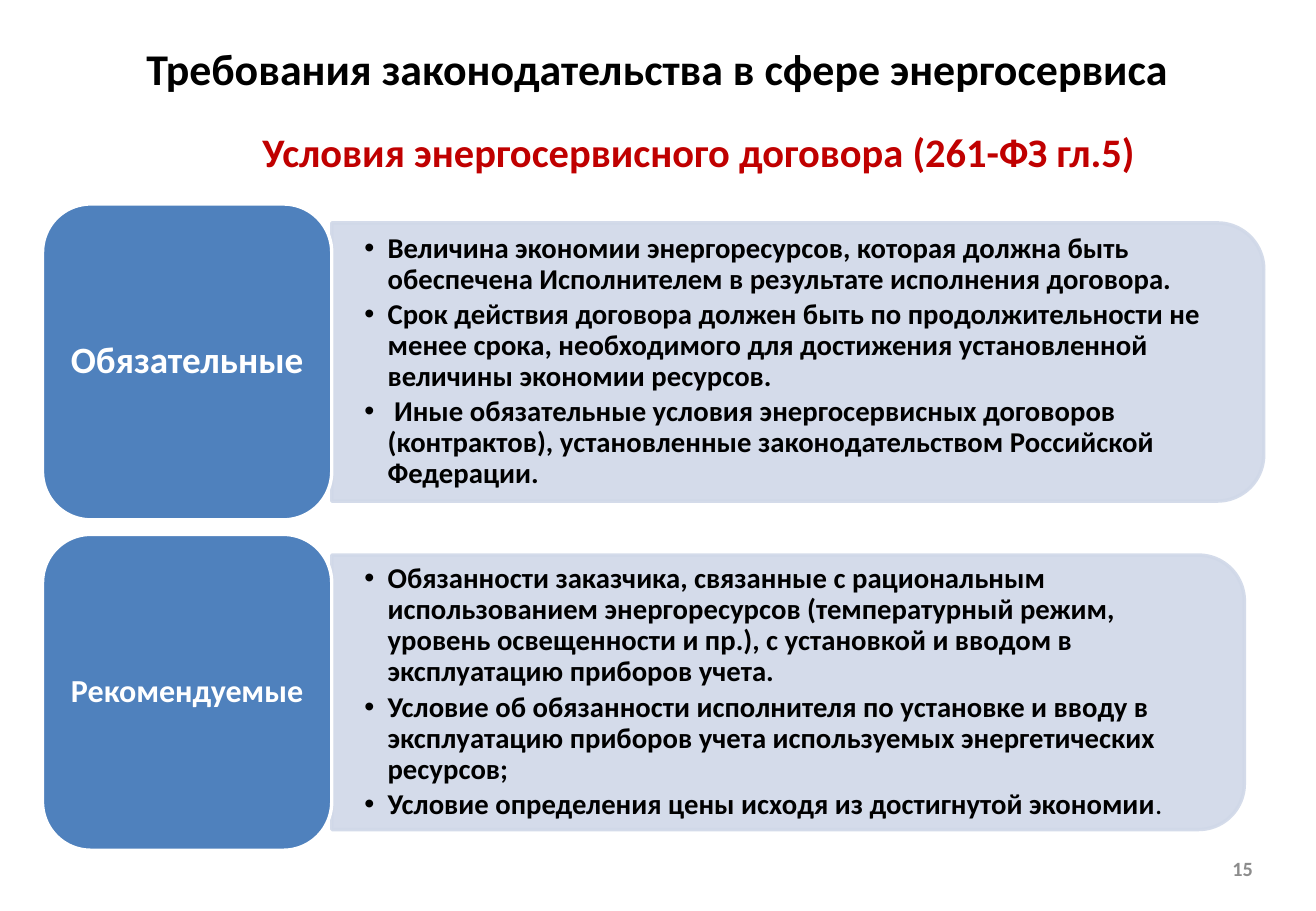
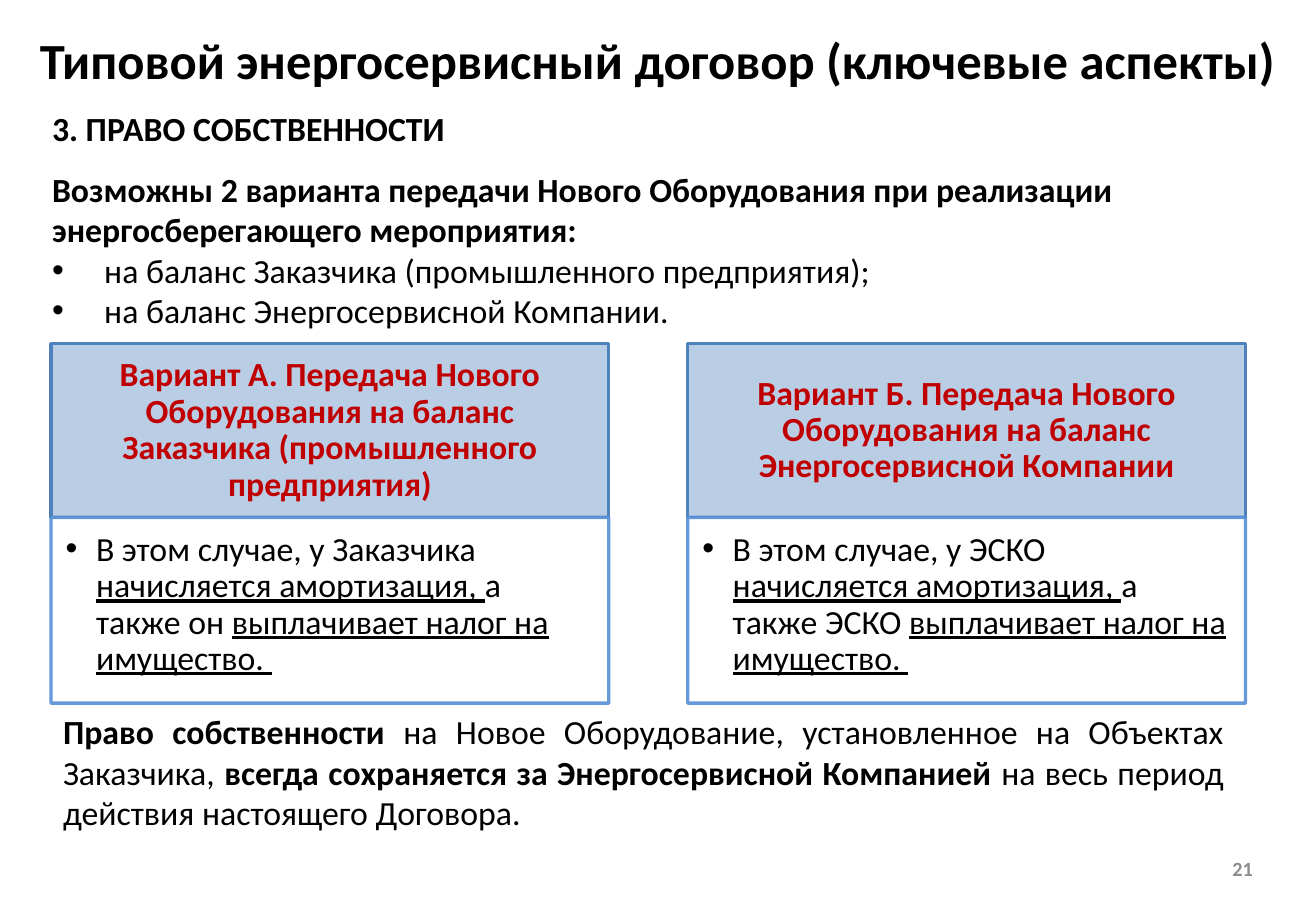
from lxml.etree import SubElement
from pptx import Presentation
from pptx.dml.color import RGBColor
from pptx.enum.shapes import MSO_SHAPE as Shape
from pptx.enum.text import MSO_ANCHOR as Anchor, MSO_AUTO_SIZE as AutoSize, PP_ALIGN as Align
from pptx.oxml.ns import qn
from pptx.util import Inches, Pt

FONT = "Calibri"
BLACK, WHITE, RED, GRAY = "000000", "FFFFFF", "C00000", "8C8C8C"
BLUE, PALE_BLUE, CARD_BLUE, CARD_LINE = "4F81BD", "D0D8E8", "B9CDE5", "558ED5"
SLIDE_WIDTH, SLIDE_HEIGHT = 10.83, 7.5
MARGINS = (0.1, 0.05, 0.1, 0.05)

BLOCK_LEFT, BLOCK_TOP, BLOCK_WIDTH, BLOCK_HEIGHT, BLOCK_STEP = 0.35, 1.68, 2.38, 2.6, 2.72
PANEL_INSET = 0.11
CARD_LEFT, CARD_TOP, CARD_WIDTH, CARD_STEP = 0.42, 2.83, 4.59, 5.24
HEAD_HEIGHT, BODY_HEIGHT = 1.43, 1.53

CONDITIONS = [
    ("Обязательные", 22, 7.67, 2.29, [
        "Величина экономии энергоресурсов, которая должна быть обеспечена Исполнителем "
        "в результате исполнения договора.",
        "Срок действия договора должен быть по продолжительности не менее срока, "
        "необходимого для достижения установленной величины экономии ресурсов.",
        " Иные обязательные условия энергосервисных договоров (контрактов), "
        "установленные законодательством Российской Федерации.",
    ]),
    ("Рекомендуемые", 19, 7.51, 2.26, [
        "Обязанности заказчика, связанные с рациональным использованием энергоресурсов "
        "(температурный режим, уровень освещенности и пр.), с установкой и вводом "
        "в эксплуатацию приборов учета.",
        "Условие об обязанности исполнителя по установке и вводу в эксплуатацию "
        "приборов учета используемых энергетических ресурсов;",
        [("Условие определения цены исходя из достигнутой экономии", "b"), (".", "")],
    ]),
]
VARIANTS = [
    ("Вариант А. Передача Нового Оборудования на баланс Заказчика "
     "(промышленного предприятия)", "Заказчика", "он"),
    ("Вариант Б. Передача Нового Оборудования на баланс Энергосервисной Компании",
     "ЭСКО", "ЭСКО"),
]


def color(value):
    return RGBColor.from_string(value)


def add_bullet(para, hang):
    properties = para._p.get_or_add_pPr()
    properties.set("marL", str(Inches(hang)))
    properties.set("indent", str(-Inches(hang)))
    SubElement(properties, qn("a:buFont"), typeface="Arial")
    SubElement(properties, qn("a:buChar"), char="•")


def write(frame, paragraphs, size=20, ink=BLACK, bold=False, align=Align.LEFT,
          anchor=Anchor.MIDDLE, margins=MARGINS, spacing=1.0, after=0, hang=0, first_bullet=0):
    frame.word_wrap = True
    frame.auto_size = AutoSize.NONE
    frame.vertical_anchor = anchor
    (frame.margin_left, frame.margin_top,
     frame.margin_right, frame.margin_bottom) = map(Inches, margins)
    for index, content in enumerate(paragraphs):
        para = frame.add_paragraph() if index else frame.paragraphs[0]
        para.alignment = align
        para.line_spacing = spacing
        para.space_before = Pt(0)
        para.space_after = Pt(after)
        if hang and index >= first_bullet:
            add_bullet(para, hang)
        spans = [(content, "b" if bold else "")] if isinstance(content, str) else content
        for text, marks in spans:
            span = para.add_run()
            span.text = text
            span.font.name = FONT
            span.font.size = Pt(size)
            span.font.color.rgb = color(ink)
            span.font.bold = "b" in marks
            span.font.underline = "u" in marks


def add_text(page, left, top, width, height, paragraphs, **text_format):
    box = page.shapes.add_textbox(*map(Inches, (left, top, width, height)))
    write(box.text_frame, paragraphs, **text_format)


def add_box(page, kind, left, top, width, height, fill, line, opacity=None):
    box = page.shapes.add_shape(kind, *map(Inches, (left, top, width, height)))
    box.shadow.inherit = False
    box.fill.solid()
    box.fill.fore_color.rgb = color(fill)
    box.line.color.rgb = color(line)
    box.line.width = Pt(2)
    if opacity:
        for paint in box._element.spPr.iter(qn("a:srgbClr")):
            SubElement(paint, qn("a:alpha"), val=str(opacity * 1000))
    return box


def add_page(deck, title, top, size, number):
    page = deck.slides.add_slide(deck.slide_layouts[5])
    heading = page.shapes.title
    heading.left, heading.top = Inches(0), Inches(top)
    heading.width, heading.height = Inches(SLIDE_WIDTH), Inches(0.58)
    write(heading.text_frame, [title], size=size, bold=True, align=Align.CENTER, spacing=1.1)
    add_text(page, 7.88, 6.95, 2.53, 0.4, [number], size=12, ink=GRAY, bold=True,
             align=Align.RIGHT)
    return page


def add_condition(page, top, label, label_size, width, height, items):
    left = BLOCK_LEFT + BLOCK_WIDTH
    middle = top + BLOCK_HEIGHT / 2
    panel = add_box(page, Shape.ROUND_2_SAME_RECTANGLE, left + (width - height) / 2,
                    middle - width / 2, height, width, PALE_BLUE, PALE_BLUE, opacity=90)
    panel.rotation = 90
    add_text(page, left, middle - height / 2 + PANEL_INSET, width - PANEL_INSET,
             height - 2 * PANEL_INSET, items, size=17, bold=True,
             margins=(0.27, 0.14, 0.27, 0.14), spacing=0.9, after=2.5, hang=0.19)
    block = add_box(page, Shape.ROUNDED_RECTANGLE, BLOCK_LEFT, top, BLOCK_WIDTH,
                    BLOCK_HEIGHT, BLUE, WHITE)
    write(block.text_frame, [label], size=label_size, ink=WHITE, bold=True,
          align=Align.CENTER, margins=(0.08, 0.05, 0.08, 0.05), spacing=0.9)


def add_variant(page, left, heading, owner, payer):
    head = add_box(page, Shape.RECTANGLE, left, CARD_TOP, CARD_WIDTH, HEAD_HEIGHT,
                   CARD_BLUE, BLUE)
    write(head.text_frame, [heading], ink=RED, bold=True, align=Align.CENTER,
          margins=(0.16, 0.09, 0.16, 0.09), spacing=0.9)
    body = add_box(page, Shape.RECTANGLE, left, CARD_TOP + HEAD_HEIGHT, CARD_WIDTH,
                   BODY_HEIGHT, WHITE, CARD_LINE, opacity=90)
    spans = [(f"В этом случае, у {owner} ", ""), ("начисляется амортизация, ", "u"),
             (f"а также {payer} ", ""), ("выплачивает налог на имущество. ", "u")]
    write(body.text_frame, [spans], anchor=Anchor.TOP, margins=(0.12, 0.12, 0.16, 0.17),
          spacing=0.9, hang=0.25)


def build_conditions(deck):
    page = add_page(deck, "Требования законодательства в сфере энергосервиса", 0.25, 26, "15")
    add_text(page, 0.75, 0.95, 10, 0.6, ["Условия энергосервисного договора (261-ФЗ гл.5)"],
             size=24, ink=RED, bold=True, align=Align.CENTER)
    for index, condition in enumerate(CONDITIONS):
        add_condition(page, BLOCK_TOP + index * BLOCK_STEP, *condition)


def build_ownership(deck):
    page = add_page(deck, "Типовой энергосервисный договор (ключевые аспекты)", 0.17, 30, "21")
    add_text(page, 0.33, 0.83, 4, 0.44, ["3. ПРАВО СОБСТВЕННОСТИ"], bold=True)
    add_text(page, 0.33, 1.33, 10, 1.45, [
        [("Возможны 2 варианта передачи Нового Оборудования при реализации "
          "энергосберегающего мероприятия:", "b")],
        "на баланс Заказчика (промышленного предприятия);",
        "на баланс Энергосервисной Компании.",
    ], hang=0.43, first_bullet=1)
    for index, variant in enumerate(VARIANTS):
        add_variant(page, CARD_LEFT + index * CARD_STEP, *variant)
    add_text(page, 0.42, 5.8, 9.75, 1.11, [[
        ("Право собственности ", "b"),
        ("на Новое Оборудование, установленное на Объектах Заказчика, ", ""),
        ("всегда сохраняется за Энергосервисной Компанией ", "b"),
        ("на весь период действия настоящего Договора.", ""),
    ]], align=Align.JUSTIFY)


def main():
    deck = Presentation()
    deck.slide_width, deck.slide_height = Inches(SLIDE_WIDTH), Inches(SLIDE_HEIGHT)
    build_conditions(deck)
    build_ownership(deck)
    deck.save("out.pptx")


if __name__ == "__main__":
    main()
